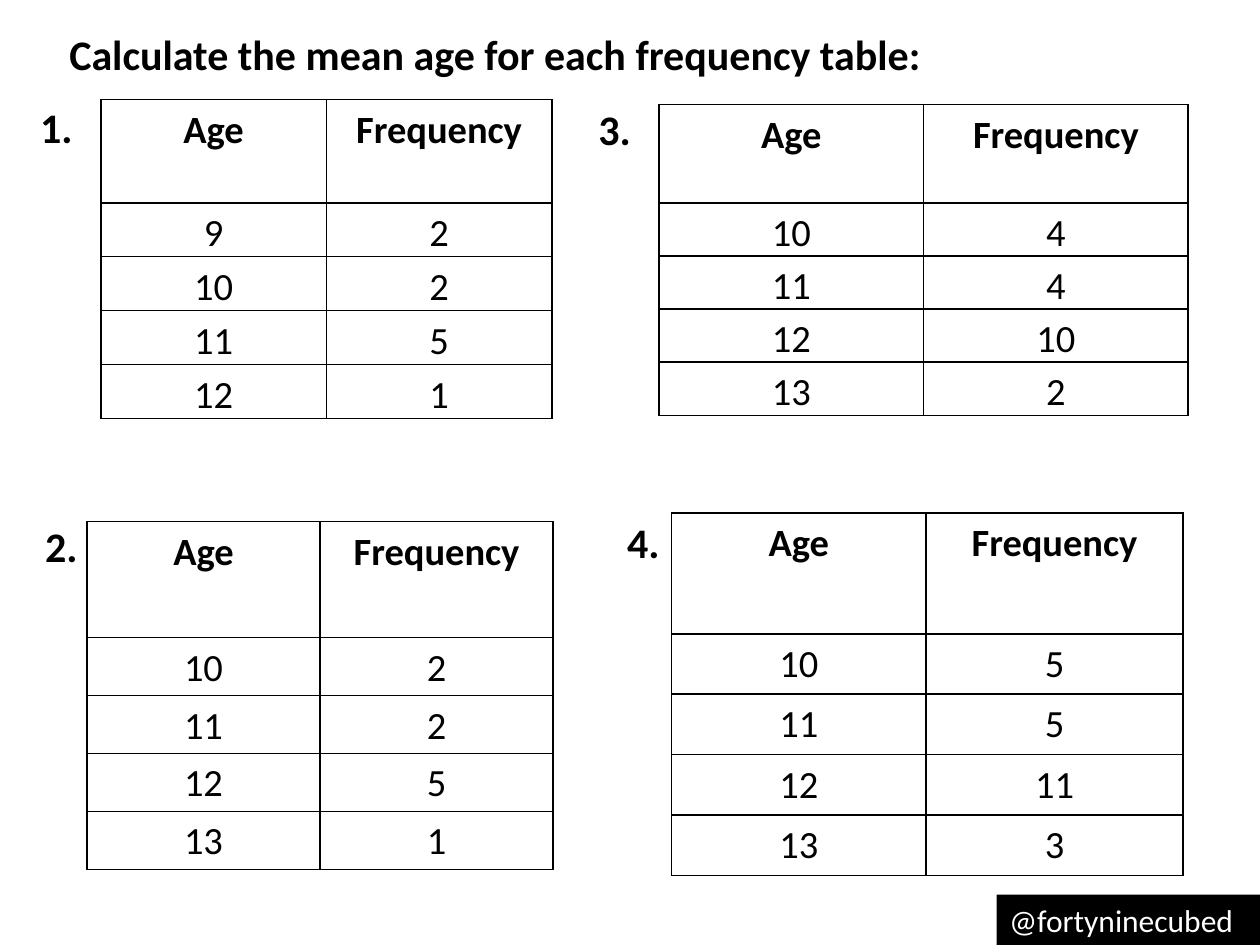
from lxml import etree
from pptx import Presentation
from pptx.dml.color import RGBColor
from pptx.enum import shapes, text
from pptx.oxml.ns import qn
from pptx.util import Inches, Pt

COLORS = {"ink": "000000", "paper": "FFFFFF"}
FONT = "Calibri"
HEADINGS = ("Age", "Frequency")

# number, number position, table position, column widths, row height, (age, frequency) rows
EXERCISES = [
    ("1.", (0.22, 0.76), (0.8, 0.79), (1.79, 1.79), 0.41,
     [(9, 2), (10, 2), (11, 5), (12, 1)]),
    ("2.", (0.26, 4.08), (0.69, 4.14), (1.85, 1.85), 0.46,
     [(10, 2), (11, 2), (12, 5), (13, 1)]),
    ("3.", (4.65, 0.77), (5.23, 0.83), (2.1, 2.1), 0.39,
     [(10, 4), (11, 4), (12, 10), (13, 2)]),
    ("4.", (4.88, 4.05), (5.33, 4.07), (2.02, 2.04), 0.48,
     [(10, 5), (11, 5), (12, 11), (13, 3)]),
]


def add_span(para, words, size, color="ink", bold=False):
    span = para.add_run()
    span.text = words
    span.font.name = FONT
    span.font.size = Pt(size)
    span.font.bold = bold
    span.font.color.rgb = RGBColor.from_string(COLORS[color])


def fill_title(page, words):
    title = page.shapes.title
    title.left, title.top = Inches(0.45), Inches(0.18)
    title.width, title.height = Inches(8.54), Inches(0.5)
    frame = title.text_frame
    frame.auto_size = text.MSO_AUTO_SIZE.NONE
    frame.vertical_anchor = text.MSO_ANCHOR.TOP
    para = frame.paragraphs[0]
    para.alignment = text.PP_ALIGN.LEFT
    add_span(para, words, 24, bold=True)


def add_number(page, number, position):
    left, top = position
    box = page.shapes.add_textbox(Inches(left), Inches(top), Inches(0.56), Inches(0.5))
    box.text_frame.word_wrap = True
    add_span(box.text_frame.paragraphs[0], number, 24, bold=True)


def add_borders(cell):
    """Draw a thin line on all four sides; call before setting the cell's fill."""
    properties = cell._tc.get_or_add_tcPr()
    for side in ("a:lnL", "a:lnR", "a:lnT", "a:lnB"):
        line = etree.SubElement(properties, qn(side), w=str(Pt(1)))
        fill = etree.SubElement(line, qn("a:solidFill"))
        etree.SubElement(fill, qn("a:srgbClr"), val=COLORS["ink"])


def format_cell(cell, words, bold):
    add_borders(cell)
    cell.fill.background()
    cell.margin_left = cell.margin_right = Inches(0.07)
    cell.margin_top = cell.margin_bottom = 0
    para = cell.text_frame.paragraphs[0]
    para.alignment = text.PP_ALIGN.CENTER
    para.line_spacing = 1.15
    add_span(para, words, 22, bold=bold)


def add_frequency_table(page, position, widths, row_height, data):
    """Place a table whose heading row is twice as high as the others."""
    rows = [HEADINGS] + data
    left, top = position
    table = page.shapes.add_table(
        len(rows), len(HEADINGS), Inches(left), Inches(top),
        Inches(sum(widths)), Inches(row_height * (len(rows) + 1))).table
    table.horz_banding = False
    for column, width in zip(table.columns, widths):
        column.width = Inches(width)
    for i, values in enumerate(rows):
        table.rows[i].height = Inches(row_height * (2 if i == 0 else 1))
        for j, value in enumerate(values):
            format_cell(table.cell(i, j), str(value), bold=i == 0)


def add_handle(page, words):
    box = page.shapes.add_shape(shapes.MSO_SHAPE.RECTANGLE, Inches(7.91), Inches(7.1),
                                Inches(2.09), Inches(0.4))
    box.shadow.inherit = False
    box.fill.solid()
    box.fill.fore_color.rgb = RGBColor.from_string(COLORS["ink"])
    box.line.fill.background()
    frame = box.text_frame
    frame.word_wrap = True
    frame.vertical_anchor = text.MSO_ANCHOR.TOP
    para = frame.paragraphs[0]
    para.alignment = text.PP_ALIGN.LEFT
    add_span(para, words, 18, "paper")


def main():
    deck = Presentation()
    deck.slide_width, deck.slide_height = Inches(10), Inches(7.5)
    page = deck.slides.add_slide(deck.slide_layouts.get_by_name("Title Only"))
    fill_title(page, "Calculate the mean age for each frequency table:")
    add_handle(page, "@fortyninecubed")
    for number, number_position, table_position, widths, row_height, data in EXERCISES:
        add_frequency_table(page, table_position, widths, row_height, data)
        add_number(page, number, number_position)
    deck.save("out.pptx")


if __name__ == "__main__":
    main()
